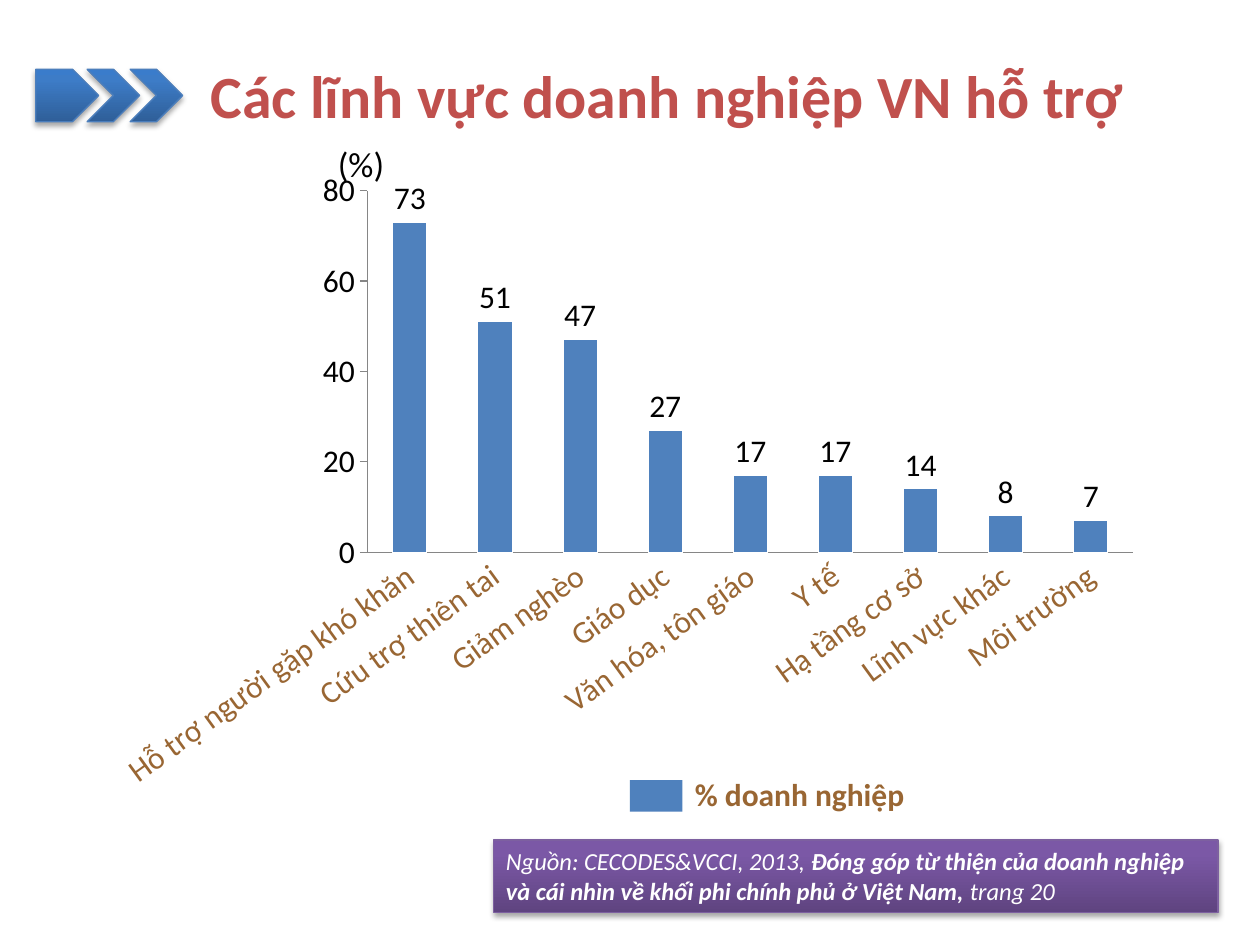
import pptx
import pptx.util
import pptx.oxml
import pptx.dml.color
import pptx.chart.data
import pptx.enum.chart
import pptx.enum.shapes
import pptx.enum.text

COLS, ROWS = 120, 90
WIDE, HIGH = pptx.util.Inches(10), pptx.util.Inches(7.5)
NS = 'xmlns:a="http://schemas.openxmlformats.org/drawingml/2006/main"'
BLUE, BROWN = "4F81BD", "996633"
KINDS = pptx.enum.shapes.MSO_SHAPE
DATA = {
    "Hỗ trợ người gặp khó khăn": 73, "Cứu trợ thiên tai": 51,
    "Giảm nghèo": 47, "Giáo dục": 27, "Văn hóa, tôn giáo": 17,
    "Y tế": 17, "Hạ tầng cơ sở": 14, "Lĩnh vực khác": 8, "Môi trường": 7,
}


def color(text):
    return pptx.dml.color.RGBColor.from_string(text)


def box(col, row, cols, rows):
    """Turn grid columns and rows into slide lengths."""
    return (int(col * WIDE / COLS), int(row * HIGH / ROWS),
            int(cols * WIDE / COLS), int(rows * HIGH / ROWS))


def style(font, size, hue="000000", bold=False, italic=False):
    font.name = "Calibri"
    font.size = pptx.util.Pt(size)
    font.bold, font.italic = bold, italic
    font.color.rgb = color(hue)


def write(para, text, **look):
    run = para.add_run()
    run.text = text
    style(run.font, **look)


def label(slide, place, text, **look):
    frame = slide.shapes.add_textbox(*box(*place)).text_frame
    frame.word_wrap = True
    write(frame.paragraphs[0], text, **look)


def gloss(shape, edge, stops):
    """Give a shape an upward gradient, a thin edge and a soft shadow."""
    shape.line.color.rgb = color(edge)
    shape.line.width = pptx.util.Pt(0.75)
    marks = "".join(f'<a:gs pos="{pos}000"><a:srgbClr val="{hue}"/></a:gs>'
                    for pos, hue in zip((0, 80, 100), stops))
    fill = pptx.oxml.parse_xml(
        f'<a:gradFill {NS} rotWithShape="1"><a:gsLst>{marks}</a:gsLst>'
        '<a:lin ang="16200000" scaled="0"/></a:gradFill>')
    shade = pptx.oxml.parse_xml(
        f'<a:effectLst {NS}><a:outerShdw blurRad="40000" dist="23000" '
        'dir="5400000" rotWithShape="0"><a:srgbClr val="000000">'
        '<a:alpha val="35000"/></a:srgbClr></a:outerShdw></a:effectLst>')
    shape.line._get_or_add_ln().addprevious(fill)
    shape._element.spPr.append(shade)


def title(slide, place, text, **look):
    head = slide.shapes.title
    head.left, head.top, head.width, head.height = box(*place)
    frame = head.text_frame
    frame.vertical_anchor = pptx.enum.text.MSO_ANCHOR.MIDDLE
    frame.paragraphs[0].alignment = pptx.enum.text.PP_ALIGN.CENTER
    write(frame.paragraphs[0], text, **look)


def arrows(slide):
    group = slide.shapes.add_group_shape()
    for kind, col, cols in ((KINDS.CHEVRON, 8.3, 5), (KINDS.PENTAGON, 3.4, 6),
                            (KINDS.CHEVRON, 12.4, 5)):
        shape = group.shapes.add_shape(kind, *box(col, 6.6, cols, 5))
        gloss(shape, "4B7EBC", ("2F5F99", "3D7CC7", "3A7CCB"))


def layout(chart, **shares):
    """Fix the inner plot area as shares of the chart."""
    area = chart._chartSpace.chart.plotArea
    for old in area.findall(pptx.oxml.ns.qn("c:layout")):
        area.remove(old)
    marks = "".join(f'<c:{key} val="{val}"/>' for key, val in shares.items())
    area.insert(0, pptx.oxml.parse_xml(
        '<c:layout xmlns:c="http://schemas.openxmlformats.org/drawingml/2006/chart">'
        '<c:manualLayout><c:layoutTarget val="inner"/><c:xMode val="edge"/>'
        f'<c:yMode val="edge"/>{marks}</c:manualLayout></c:layout>'))


def columns(slide, place):
    data = pptx.chart.data.CategoryChartData(number_format="0")
    data.categories = list(DATA)
    data.add_series("Series 1", list(DATA.values()))
    names = pptx.enum.chart
    chart = slide.shapes.add_chart(
        names.XL_CHART_TYPE.COLUMN_CLUSTERED, *box(*place), data).chart
    chart.has_legend = chart.has_title = False
    style(chart.font, 18)
    layout(chart, x=0.27, y=0.03, w=0.73, h=0.53)

    plot = chart.plots[0]
    plot.gap_width, plot.vary_by_categories = 150, False
    bars = plot.series[0].format
    bars.fill.solid()
    bars.fill.fore_color.rgb = color(BLUE)
    bars.line.color.rgb = color("FFFFFF")
    plot.has_data_labels = True
    tags = plot.data_labels
    tags.show_value = True
    tags.position = names.XL_LABEL_POSITION.OUTSIDE_END
    style(tags.font, 18)

    across, up = chart.category_axis, chart.value_axis
    for axis, hue in ((across, BROWN), (up, "000000")):
        axis.has_major_gridlines = False
        axis.format.line.color.rgb = color("868686")
        style(axis.tick_labels.font, 18, hue)
    across.major_tick_mark = names.XL_TICK_MARK.NONE
    across.tick_labels.font._element.getparent().getparent().getparent().bodyPr.set(
        "rot", str(-36 * 60000))
    up.major_tick_mark = names.XL_TICK_MARK.OUTSIDE
    up.minimum_scale, up.maximum_scale, up.major_unit = 0, 80, 20


def legend(slide):
    label(slide, (65, 73.2, 36, 4.8), "% doanh nghiệp",
          size=18, hue=BROWN, bold=True)
    swatch = slide.shapes.add_shape(KINDS.RECTANGLE, *box(60, 74.3, 5, 3))
    swatch.shadow.inherit = False
    swatch.fill.solid()
    swatch.fill.fore_color.rgb = color(BLUE)
    swatch.line.fill.background()


def source(slide, place, parts):
    """Add the source note; every second part is bold."""
    shape = slide.shapes.add_shape(KINDS.RECTANGLE, *box(*place))
    gloss(shape, "7D60A0", ("5F4480", "7B58A6", "7C57A8"))
    frame = shape.text_frame
    frame.word_wrap = True
    frame.vertical_anchor = pptx.enum.text.MSO_ANCHOR.TOP
    para = frame.paragraphs[0]
    para.alignment = pptx.enum.text.PP_ALIGN.LEFT
    for spot, text in enumerate(parts):
        write(para, text, size=14, hue="FFFFFF", italic=True, bold=spot % 2 == 1)


def main():
    deck = pptx.Presentation()
    deck.slide_width, deck.slide_height = WIDE, HIGH
    slide = deck.slides.add_slide(deck.slide_layouts[5])
    title(slide, (15, 2.8, 97, 12.4), "Các lĩnh vực doanh nghiệp VN hỗ trợ",
          size=34.2, hue="C0504D", bold=True)
    arrows(slide)
    columns(slide, (8, 16.2, 100, 65))
    legend(slide)
    source(slide, (47, 80, 69, 6.9), (
        "Nguồn: CECODES&VCCI, 2013, ",
        "Đóng góp từ thiện của doanh nghiệp và cái nhìn về khối phi chính phủ"
        " ở Việt Nam, ",
        "trang 20"))
    label(slide, (31, 13, 7, 5.3), "(%)", size=20)
    deck.save("out.pptx")


if __name__ == "__main__":
    main()
